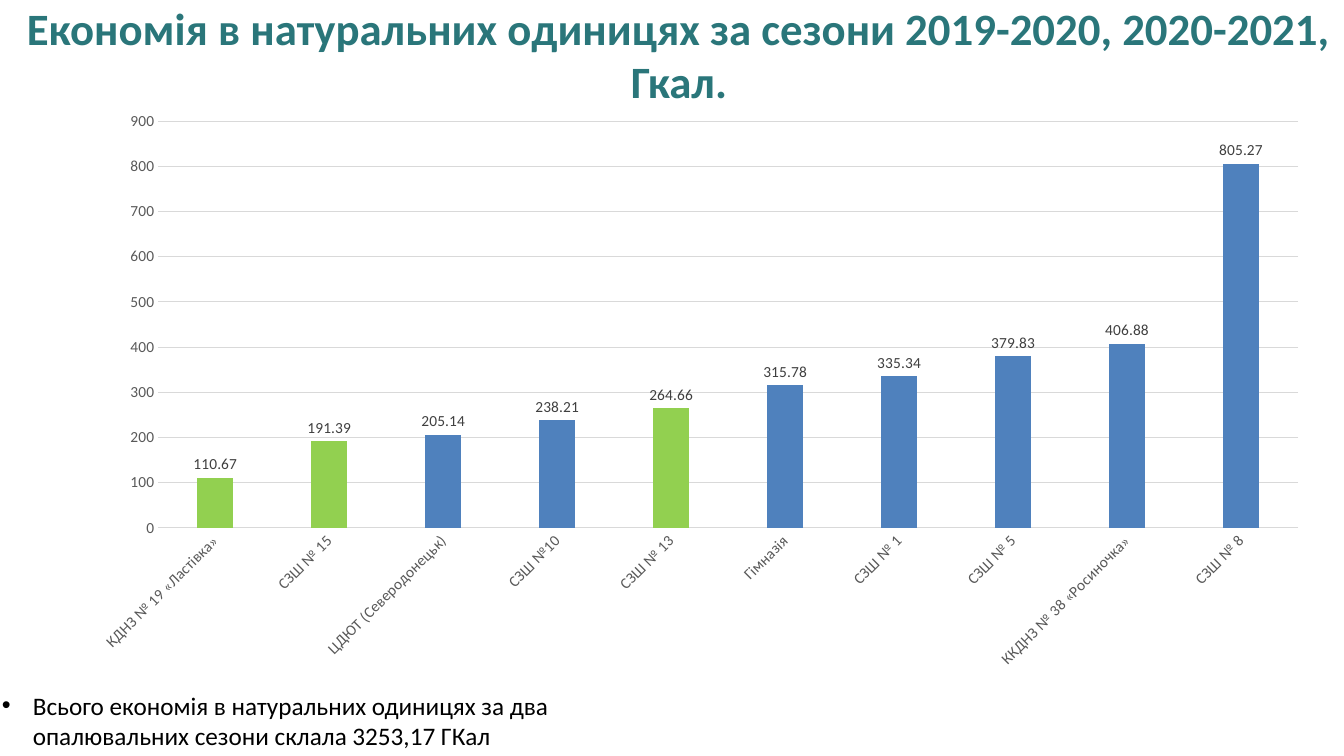
import pptx
import pptx.chart.data
import pptx.dml.color
import pptx.enum.chart
import pptx.enum.text
import pptx.oxml.ns
import pptx.util
from lxml import etree

PX = 914400 / 100.8
FONT = "Calibri"
TEAL, BLACK, GRID = "2A767A", "000000", "D9D9D9"
AXIS_TEXT, LABEL_TEXT = "595959", "404040"
BLUE, GREEN = "4F81BD", "92D050"

SAVINGS = {
    "КДНЗ № 19 «Ластівка»": 110.67,
    "СЗШ № 15": 191.39,
    "ЦДЮТ (Северодонецьк)": 205.14,
    "СЗШ №10": 238.21,
    "СЗШ № 13": 264.66,
    "Гімназія": 315.78,
    "СЗШ № 1": 335.34,
    "СЗШ № 5": 379.83,
    "ККДНЗ № 38 «Росиночка»": 406.88,
    "СЗШ № 8": 805.27,
}
GREEN_BARS = (0, 1, 4)


def px(*lengths):
    return [pptx.util.Emu(round(length * PX)) for length in lengths]


def color(hex_code):
    return pptx.dml.color.RGBColor.from_string(hex_code)


def style_font(font, size, hex_code, bold=False):
    font.name = FONT
    font.size = pptx.util.Pt(size)
    font.bold = bold
    font.color.rgb = color(hex_code)


def style_fill(fill, hex_code):
    fill.solid()
    fill.fore_color.rgb = color(hex_code)


def style_line(line, hex_code):
    line.width = pptx.util.Pt(0.75)
    line.color.rgb = color(hex_code)


def add_text(slide, box, text, size, hex_code, bold=False, align="LEFT",
             anchor="TOP", bullet_indent=0):
    frame = slide.shapes.add_textbox(*px(*box)).text_frame
    frame.word_wrap = True
    frame.vertical_anchor = getattr(pptx.enum.text.MSO_ANCHOR, anchor)
    paragraph = frame.paragraphs[0]
    paragraph.alignment = getattr(pptx.enum.text.PP_ALIGN, align)
    run = paragraph.add_run()
    run.text = text
    style_font(run.font, size, hex_code, bold)
    if bullet_indent:
        indent = px(bullet_indent)[0]
        properties = paragraph._p.get_or_add_pPr()
        properties.set("marL", str(indent))
        properties.set("indent", str(-indent))
        qn = pptx.oxml.ns.qn
        etree.SubElement(properties, qn("a:buFont")).set("typeface", "Arial")
        etree.SubElement(properties, qn("a:buChar")).set("char", "•")


def style_axis(axis):
    axis.major_tick_mark = pptx.enum.chart.XL_TICK_MARK.NONE
    axis.minor_tick_mark = pptx.enum.chart.XL_TICK_MARK.NONE
    style_font(axis.tick_labels.font, 11, AXIS_TEXT)


def add_savings_chart(slide, box):
    data = pptx.chart.data.CategoryChartData()
    data.categories = list(SAVINGS)
    data.add_series("Series 1", list(SAVINGS.values()))
    kind = pptx.enum.chart.XL_CHART_TYPE.COLUMN_CLUSTERED
    chart = slide.shapes.add_chart(kind, *px(*box), data).chart
    chart.has_title = False
    chart.has_legend = False
    style_font(chart.font, 11, BLACK)

    # Axes
    schools, amounts = chart.category_axis, chart.value_axis
    style_axis(schools)
    style_axis(amounts)
    style_line(schools.format.line, GRID)
    schools._element.txPr.bodyPr.set("rot", str(-45 * 60000))
    amounts.format.line.fill.background()
    amounts.has_major_gridlines = True
    style_line(amounts.major_gridlines.format.line, GRID)
    amounts.minimum_scale, amounts.maximum_scale = 0, 900
    amounts.major_unit = 100

    # Bars
    plot = chart.plots[0]
    plot.gap_width, plot.overlap = 219, -27
    plot.vary_by_categories = False
    bars = plot.series[0]
    bars.invert_if_negative = False
    style_fill(bars.format.fill, BLUE)
    for index in GREEN_BARS:
        style_fill(bars.points[index].format.fill, GREEN)

    # Values above the bars
    labels = bars.data_labels
    labels.show_value = True
    labels.position = pptx.enum.chart.XL_LABEL_POSITION.OUTSIDE_END
    style_font(labels.font, 11, LABEL_TEXT)


def main():
    deck = pptx.Presentation()
    deck.slide_width, deck.slide_height = px(1344, 756)
    slide = deck.slides.add_slide(deck.slide_layouts[6])

    # Title
    add_text(slide, (7, 18, 1344, 72),
             "Економія в натуральних одиницях за сезони 2019-2020, 2020-2021, Гкал.",
             size=32, hex_code=TEAL, bold=True, align="CENTER", anchor="MIDDLE")

    # Savings by institution
    add_savings_chart(slide, (77, 100, 1246, 580))

    # Total
    add_text(slide, (-8, 685, 684, 72),
             "Всього економія в натуральних одиницях за два "
             "опалювальних сезони склала 3253,17 ГКал",
             size=18, hex_code=BLACK, bullet_indent=31)

    deck.save("out.pptx")


if __name__ == "__main__":
    main()
